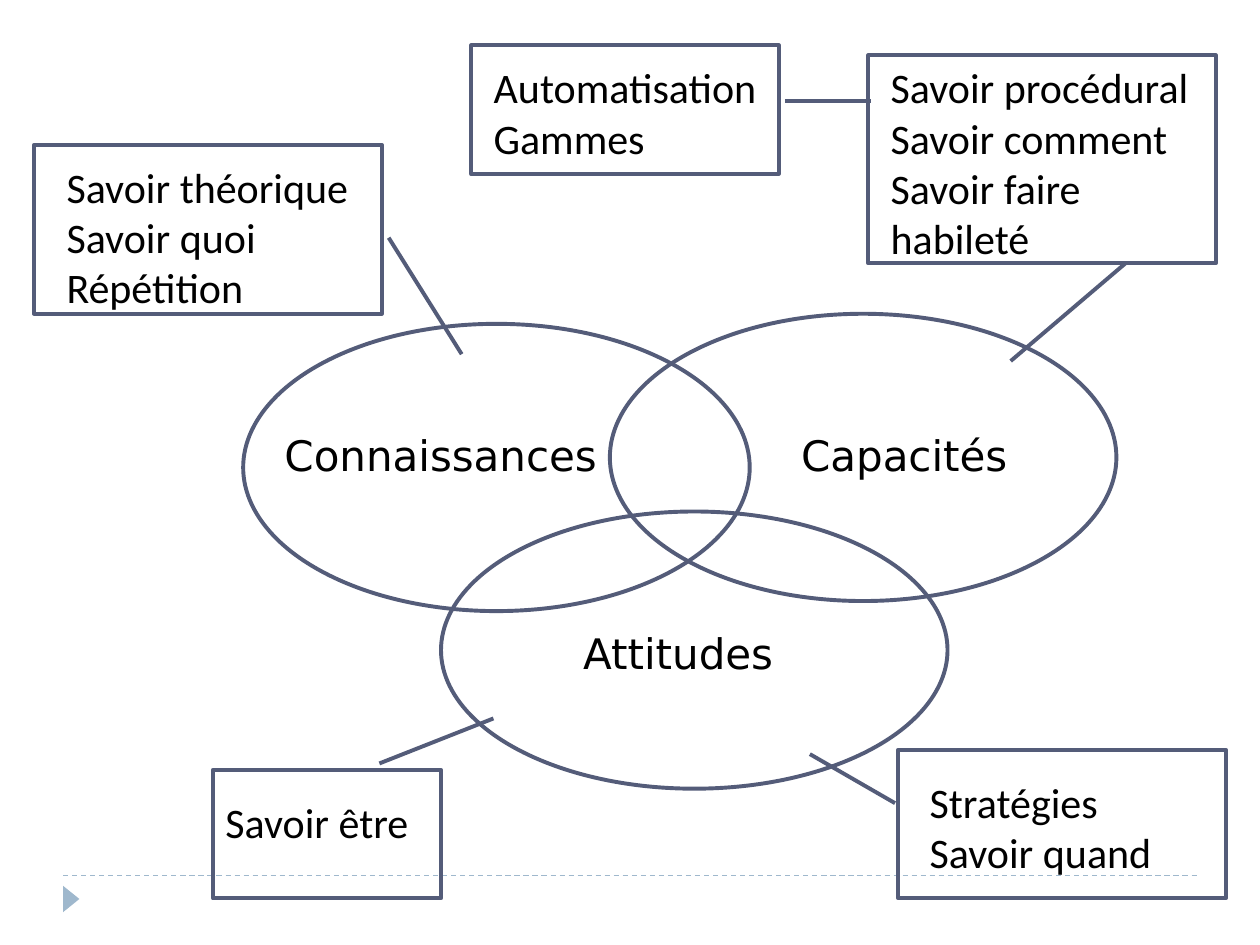
"""Build a slide of three linked circles of learning with callout notes."""
from lxml.etree import SubElement
from pptx import Presentation
from pptx.dml.color import RGBColor
from pptx.enum.dml import MSO_LINE
from pptx.enum.shapes import MSO_CONNECTOR, MSO_SHAPE
from pptx.enum.text import MSO_AUTO_SIZE
from pptx.oxml.ns import qn
from pptx.util import Inches, Pt

SLATE = RGBColor(0x54, 0x5C, 0x79)
SKY = RGBColor(0x9F, 0xB8, 0xCD)
BLACK = RGBColor(0, 0, 0)


def write(shapes, text, box, font="Calibri", size=24, color=BLACK):
    frame = shapes.add_textbox(*map(Inches, box)).text_frame
    frame.word_wrap = True
    frame.auto_size = MSO_AUTO_SIZE.SHAPE_TO_FIT_TEXT
    frame.text = text
    for para in frame.paragraphs:
        for run in para.runs:
            run.font.name = font
            run.font.size = Pt(size)
            run.font.color.rgb = color


def outline(shapes, kind, box):
    shape = shapes.add_shape(kind, *map(Inches, box))
    shape.shadow.inherit = False
    shape.fill.background()
    shape.line.color.rgb = SLATE
    shape.line.width = Pt(2.25)
    return shape


deck = Presentation()
deck.slide_width = Inches(10)
deck.slide_height = Inches(7.5)
slide = deck.slides.add_slide(deck.slide_layouts[6])

rule = slide.shapes.add_connector(
    MSO_CONNECTOR.STRAIGHT, Inches(0.5), Inches(6.95), Inches(9.5), Inches(6.95))
rule.line.color.rgb = SKY
rule.line.width = Pt(0.75)
rule.line.dash_style = MSO_LINE.DASH
SubElement(rule._element.spPr, qn("a:effectLst"))

mark = slide.shapes.add_shape(
    MSO_SHAPE.ISOSCELES_TRIANGLE, Inches(0.46), Inches(7.07), Inches(0.21), Inches(0.13))
mark.rotation = 90
mark.shadow.inherit = False
mark.fill.solid()
mark.fill.fore_color.rgb = SKY
mark.line.fill.background()

for left, top, height in [(1.93, 2.57, 2.28), (3.5, 4.06, 2.2), (4.84, 2.49, 2.28)]:
    outline(slide.shapes, MSO_SHAPE.OVAL, (left, top, 4.02, height))

for name, left, top in [
    ("Connaissances", 2.16, 3.36),
    ("Capacités", 6.26, 3.36),
    ("Attitudes", 4.53, 4.93),
]:
    write(slide.shapes, name, (left, top, 2.76, 0.51), font="DejaVu Sans")

NOTES = [
    ("Savoir être", (1.69, 6.11, 1.81, 1.02),
     (-0.05, 0.73, -0.4, 1.23), (1.69, 6.27, 1.73, 0.5)),
    ("Savoir théorique\nSavoir quoi\nRépétition", (0.27, 1.15, 2.76, 1.34),
     (0.55, 1.02, 1.24, 1.23), (0.43, 1.23, 2.53, 1.31)),
    ("Automatisation\nGammes", (3.74, 0.36, 2.44, 1.02),
     (0.43, 1.02, 0.43, 1.3), (3.82, 0.44, 2.36, 0.91)),
    ("Savoir procédural\nSavoir comment\nSavoir faire\nhabileté", (6.89, 0.44, 2.76, 1.65),
     (1, 0.74, 1.47, 0.41), (6.97, 0.44, 2.68, 1.72)),
    ("Stratégies\vSavoir quand", (7.13, 5.95, 2.6, 1.18),
     (0.36, -0.01, 0.03, -0.27), (7.28, 6.11, 2.32, 0.91)),
]
for text, box, tail, area in NOTES:
    group = slide.shapes.add_group_shape()
    note = outline(group.shapes, MSO_SHAPE.LINE_CALLOUT_1, box)
    for i, value in enumerate(tail):
        note.adjustments[i] = value
    write(group.shapes, text, area)

deck.save("out.pptx")
